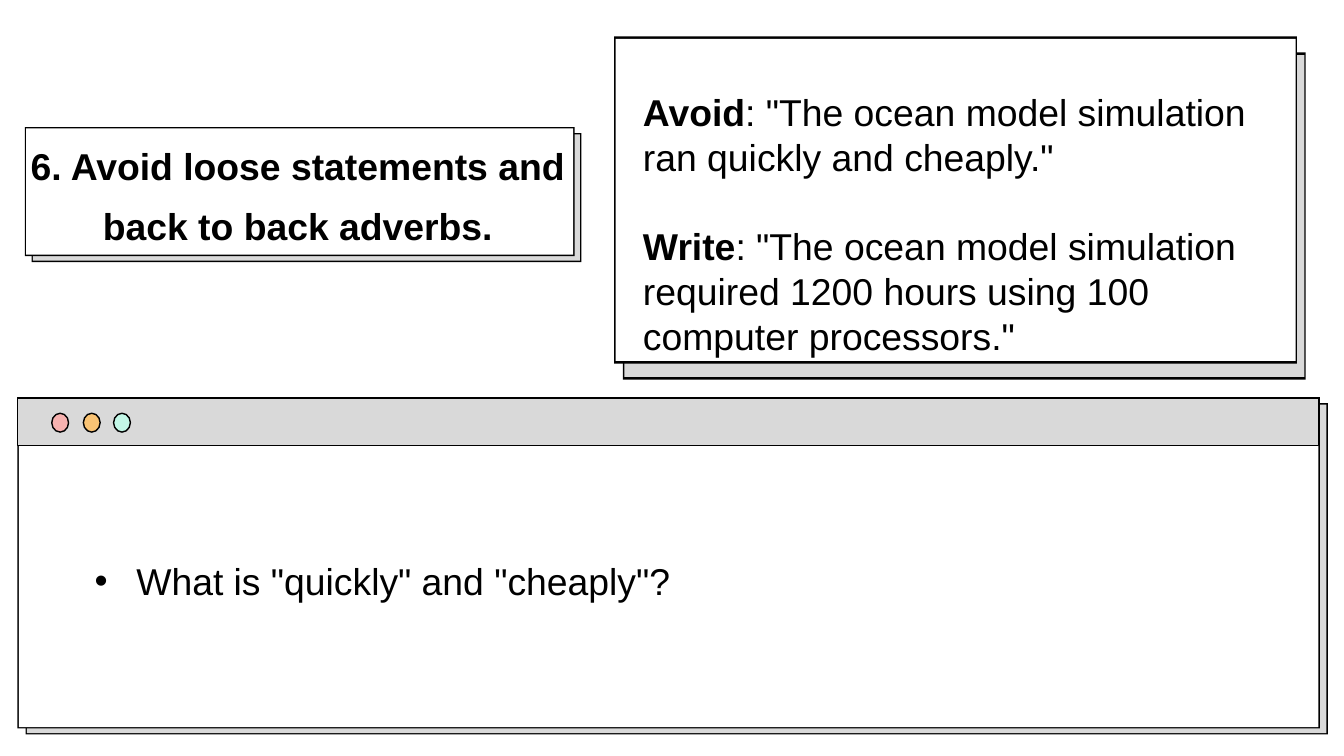
from dataclasses import dataclass

from lxml import etree
from pptx import Presentation
from pptx.dml.color import RGBColor
from pptx.enum.shapes import MSO_SHAPE
from pptx.enum.text import MSO_ANCHOR, MSO_AUTO_SIZE, PP_ALIGN
from pptx.oxml.ns import qn
from pptx.util import Inches, Pt

RECT, OVAL = MSO_SHAPE.RECTANGLE, MSO_SHAPE.OVAL
TOP, NO_FIT = MSO_ANCHOR.TOP, MSO_AUTO_SIZE.NONE
LEFT, CENTER = PP_ALIGN.LEFT, PP_ALIGN.CENTER

BLACK = RGBColor(0x00, 0x00, 0x00)
WHITE = RGBColor(0xFF, 0xFF, 0xFF)
GRAY = RGBColor(0xD9, 0xD9, 0xD9)
PINK = RGBColor(0xF7, 0xB2, 0xB0)
ORANGE = RGBColor(0xF9, 0xC3, 0x74)
MINT = RGBColor(0xC3, 0xF7, 0xE7)

FONT = {"name": "Arial", "size": Pt(40)}
BODY_SPACING = Pt(48)
TITLE_SPACING = Pt(63.6)
SIDE_EDGE = 0.02


@dataclass
class Panel:
    """A white box with a gray box behind it, shifted by (dx, dy)."""
    left: float
    top: float
    width: float
    height: float
    dx: float
    dy: float
    edge: float = 0.02  # thickness of the top and bottom edges


@dataclass
class Dot:
    left: float
    color: RGBColor


TITLE_PANEL = Panel(0.37, 1.89, 8.18, 1.92, 0.1, 0.09)
EXAMPLE_PANEL = Panel(9.14, 0.54, 10.16, 4.87, 0.13, 0.24, 0.04)
WINDOW_PANEL = Panel(0.26, 5.91, 19.38, 4.93, 0.12, 0.09)
DOTS = [Dot(0.77, PINK), Dot(1.24, ORANGE), Dot(1.69, MINT)]
EXAMPLES = [
    ("Avoid", ': "The ocean model simulation ran quickly and cheaply."'),
    ("Write", ': "The ocean model simulation required 1200 hours '
              'using 100 computer processors."'),
]


def add_filled(s, kind, left: float, top: float, width: float,
               height: float, color: RGBColor, line: float = 0) -> None:
    sp = s.shapes.add_shape(kind, Inches(left), Inches(top),
                            Inches(width), Inches(height))
    sp.shadow.inherit = False
    sp.fill.solid()
    sp.fill.fore_color.rgb = color
    if line:
        sp.line.color.rgb = BLACK
        sp.line.width = Pt(line)
    else:
        sp.line.fill.background()


def add_panel(s, panel: Panel) -> None:
    for dx, dy, color in ((panel.dx, panel.dy, GRAY), (0, 0, WHITE)):
        left, top = panel.left + dx, panel.top + dy
        add_filled(s, RECT, left, top, panel.width, panel.height, BLACK)
        add_filled(s, RECT, left + SIDE_EDGE, top + panel.edge,
                   panel.width - 2 * SIDE_EDGE,
                   panel.height - 2 * panel.edge, color)


def place_text(sp, left: float, top: float, width: float, height: float):
    sp.left, sp.top = Inches(left), Inches(top)
    sp.width, sp.height = Inches(width), Inches(height)
    tf = sp.text_frame
    frame_format = {"word_wrap": True, "auto_size": NO_FIT,
                    "vertical_anchor": TOP}
    for name, value in frame_format.items():
        setattr(tf, name, value)
    return tf


def add_text_box(s, left: float, top: float, width: float, height: float):
    sp = s.shapes.add_textbox(0, 0, 0, 0)
    return place_text(sp, left, top, width, height)


def format_paragraph(p, spacing=BODY_SPACING, align=LEFT) -> None:
    p.line_spacing = spacing
    p.alignment = align


def add_run(p, text: str, bold: bool = False) -> None:
    r = p.add_run()
    r.text = text
    for name, value in {**FONT, "bold": bold}.items():
        setattr(r.font, name, value)
    r.font.color.rgb = BLACK


def add_bullet(p, indent: float) -> None:
    pPr = p._p.get_or_add_pPr()
    pPr.set("marL", str(Inches(indent)))
    pPr.set("indent", str(-Inches(indent)))
    etree.SubElement(pPr, qn("a:buFont")).set("typeface", "Arial")
    etree.SubElement(pPr, qn("a:buChar")).set("char", "•")


def main() -> None:
    prs = Presentation()
    prs.slide_width, prs.slide_height = Inches(20), Inches(11.25)
    s = prs.slides.add_slide(prs.slide_layouts[5])

    # Panels
    for panel in (TITLE_PANEL, EXAMPLE_PANEL, WINDOW_PANEL):
        add_panel(s, panel)

    # Window bar with its buttons
    add_filled(s, RECT, 0.26, 5.92, 19.36, 0.71, GRAY, 1.5)
    for dot in DOTS:
        add_filled(s, OVAL, dot.left, 6.15, 0.25, 0.28, dot.color, 1.5)

    # Title, brought in front of its panel
    title = s.shapes.title
    s.shapes.element.append(title.element)
    p = place_text(title, 0.29, 1.87, 8.28, 1.9).paragraphs[0]
    format_paragraph(p, TITLE_SPACING, CENTER)
    add_run(p, "6. Avoid loose statements and back to back adverbs.", True)

    # Examples
    tf = add_text_box(s, 9.47, 1.28, 9.76, 3.47)
    for i, (label, sentence) in enumerate(EXAMPLES):
        p = tf.add_paragraph() if i else tf.paragraphs[0]
        format_paragraph(p)
        if i:
            p.space_before = BODY_SPACING
        add_run(p, label, True)
        add_run(p, sentence)

    # Question in the window
    p = add_text_box(s, 1.31, 8.26, 18.09, 0.77).paragraphs[0]
    add_bullet(p, 0.62)
    format_paragraph(p)
    add_run(p, 'What is "quickly" and "cheaply"?')

    prs.save("out.pptx")


if __name__ == "__main__":
    main()
